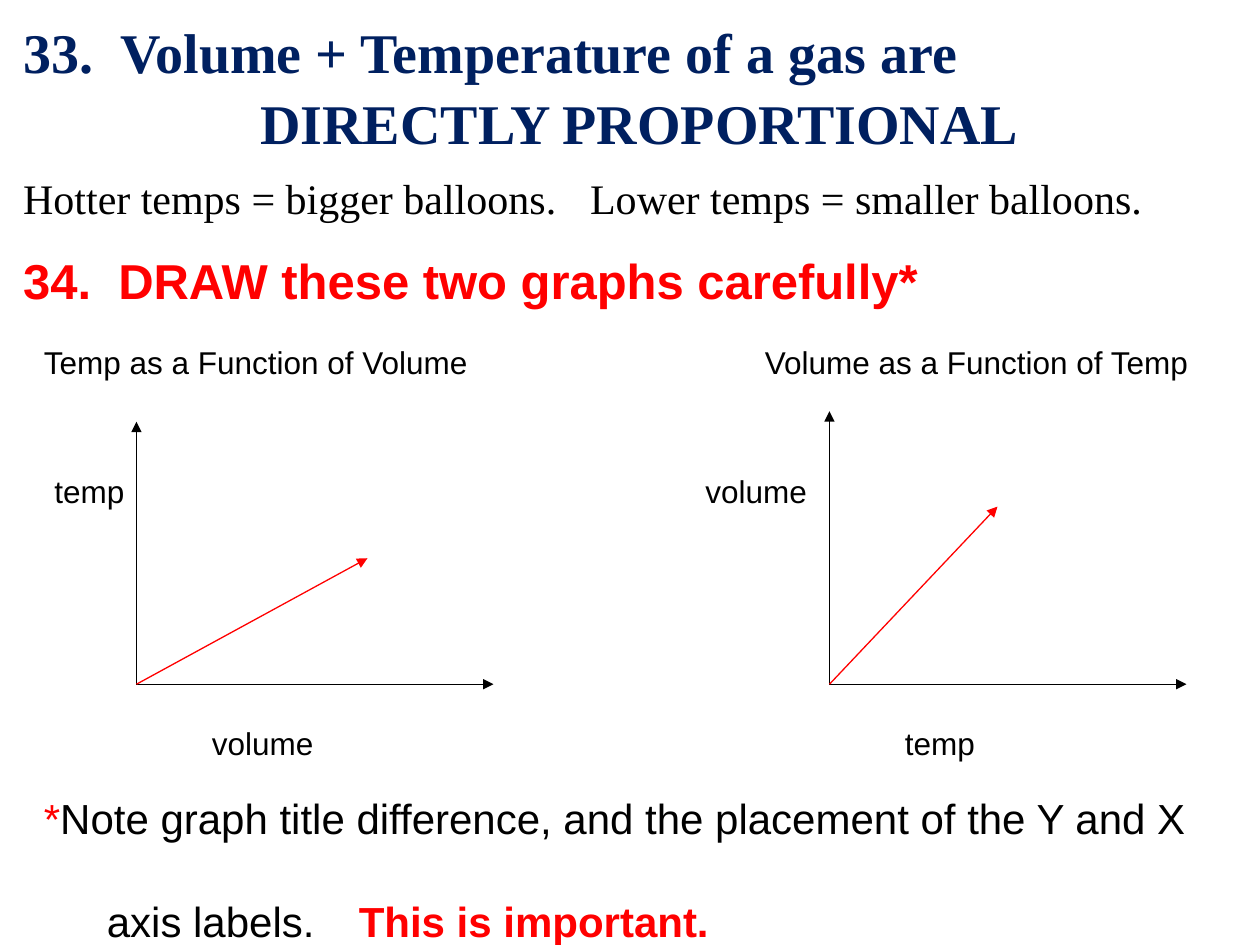
"""Build a slide on the direct proportion between gas volume and temperature."""
from dataclasses import dataclass

from lxml import etree
from pptx import Presentation
from pptx.dml.color import RGBColor
from pptx.enum.shapes import MSO_CONNECTOR
from pptx.enum.text import MSO_ANCHOR, MSO_AUTO_SIZE, PP_ALIGN
from pptx.oxml.ns import qn
from pptx.util import Pt

STRAIGHT = MSO_CONNECTOR.STRAIGHT
COLORS = {"navy": "002060", "black": "000000", "red": "FF0000"}
FRAME_FORMAT = {
    "word_wrap": True,
    "auto_size": MSO_AUTO_SIZE.NONE,
    "vertical_anchor": MSO_ANCHOR.TOP,
    "margin_left": Pt(7.2),
    "margin_right": Pt(7.2),
    "margin_top": Pt(3.6),
    "margin_bottom": Pt(3.6),
}
SERIF, SANS = "Times New Roman", "Arial"
BASELINE, X_AXIS_LENGTH = 391, 204


@dataclass
class Phrase:
    text: str
    size: float = 18
    color: str = "black"
    bold: bool = False
    font: str = SANS


@dataclass
class Line:
    phrases: list[Phrase]
    before: float = 0
    indent: float = 0
    tabs: tuple[float, ...] = ()


@dataclass
class Graph:
    heading: str
    heading_left: float
    x_label: str
    y_label: str
    y_label_left: float
    origin_x: float
    y_axis_top: float
    trend_end: tuple[float, float]


def write_lines(frame, lines: list[Line]) -> None:
    """Fill a text frame with formatted lines."""
    for name, value in FRAME_FORMAT.items():
        setattr(frame, name, value)
    for index, line in enumerate(lines):
        paragraph = frame.paragraphs[0] if index == 0 else frame.add_paragraph()
        paragraph_format = {
            "alignment": PP_ALIGN.LEFT,
            "space_before": Pt(line.before),
            "space_after": Pt(0),
        }
        for name, value in paragraph_format.items():
            setattr(paragraph, name, value)
        properties = paragraph._p.get_or_add_pPr()
        properties.set("marL", str(Pt(line.indent)))
        properties.set("indent", "0")
        etree.SubElement(properties, qn("a:buNone"))
        if line.tabs:
            stops = etree.SubElement(properties, qn("a:tabLst"))
            for position in line.tabs:
                etree.SubElement(stops, qn("a:tab"), pos=str(Pt(position)), algn="l")
        for phrase in line.phrases:
            run = paragraph.add_run()
            run.text = phrase.text
            font_format = {"name": phrase.font, "size": Pt(phrase.size), "bold": phrase.bold}
            for name, value in font_format.items():
                setattr(run.font, name, value)
            run.font.color.rgb = RGBColor.from_string(COLORS[phrase.color])


def place(holder, left: float, top: float, width: float, height: float) -> None:
    """Move a placeholder to a position in points."""
    bounds = {"left": left, "top": top, "width": width, "height": height}
    for name, value in bounds.items():
        setattr(holder, name, Pt(value))


def add_text(slide, left: float, top: float, width: float, height: float,
             lines: list[Line]) -> None:
    """Add a text box holding the given lines."""
    box = slide.shapes.add_textbox(Pt(left), Pt(top), Pt(width), Pt(height))
    write_lines(box.text_frame, lines)


def add_arrow(slide, start: tuple[float, float], end: tuple[float, float],
              color: str) -> None:
    """Add a thin straight arrow between two points."""
    arrow = slide.shapes.add_connector(STRAIGHT, *(Pt(value) for value in start + end))
    arrow.line.color.rgb = RGBColor.from_string(COLORS[color])
    arrow.line.width = Pt(0.75)
    etree.SubElement(arrow.line._get_or_add_ln(), qn("a:tailEnd"), type="triangle")
    etree.SubElement(arrow._element.spPr, qn("a:effectLst"))


def add_graph(slide, graph: Graph) -> None:
    """Draw the heading, axes, trend and axis labels of one graph."""
    origin = (graph.origin_x, BASELINE)
    labels = (
        (graph.heading, graph.heading_left, 192.5, 264),
        (graph.y_label, graph.y_label_left, 266, 78),
        (graph.x_label, graph.origin_x + 36, 410, 102),
    )
    for text, left, top, width in labels:
        add_text(slide, left, top, width, 29, [Line([Phrase(text)])])
    add_arrow(slide, origin, (graph.origin_x, graph.y_axis_top), "black")
    add_arrow(slide, origin, (graph.origin_x + X_AXIS_LENGTH, BASELINE), "black")
    add_arrow(slide, origin, graph.trend_end, "red")


def main() -> None:
    """Assemble and save the slide."""
    deck = Presentation()
    deck.slide_width, deck.slide_height = Pt(720), Pt(540)
    slide = deck.slides.add_slide(deck.slide_layouts[1])

    title, body = slide.placeholders
    place(title, 6, 6.5, 714, 84)
    write_lines(title.text_frame, [
        Line([Phrase("33.  Volume + Temperature of a gas are", 32, "navy", True, SERIF)]),
        Line([Phrase("DIRECTLY PROPORTIONAL", 32, "navy", True, SERIF)], before=2, indent=135.5),
    ])
    place(body, 6, 95, 714, 88)
    write_lines(body.text_frame, [
        Line([Phrase("Hotter temps = bigger balloons.\tLower temps = smaller balloons.",
                     24, font=SERIF)], tabs=(376.5,)),
        Line([Phrase("34.  DRAW these two graphs carefully*", 28, "red", True)], before=16),
    ])

    graphs = (
        Graph("Temp as a Function of Volume", 18, "volume", "temp", 24, 78, 241, (210, 319)),
        Graph("Volume as a Function of Temp", 430, "temp", "volume", 396, 474, 235, (570, 289.5)),
    )
    for graph in graphs:
        add_graph(slide, graph)

    add_text(slide, 18, 449.5, 678, 92, [
        Line([Phrase("*", 24, "red"),
              Phrase("Note graph title difference, and the placement of the Y and X", 24)]),
        Line([Phrase("\taxis labels.\t", 24), Phrase("This is important.", 24, "red", True)],
             before=30, tabs=(20, 172)),
    ])
    deck.save("out.pptx")


if __name__ == "__main__":
    main()
